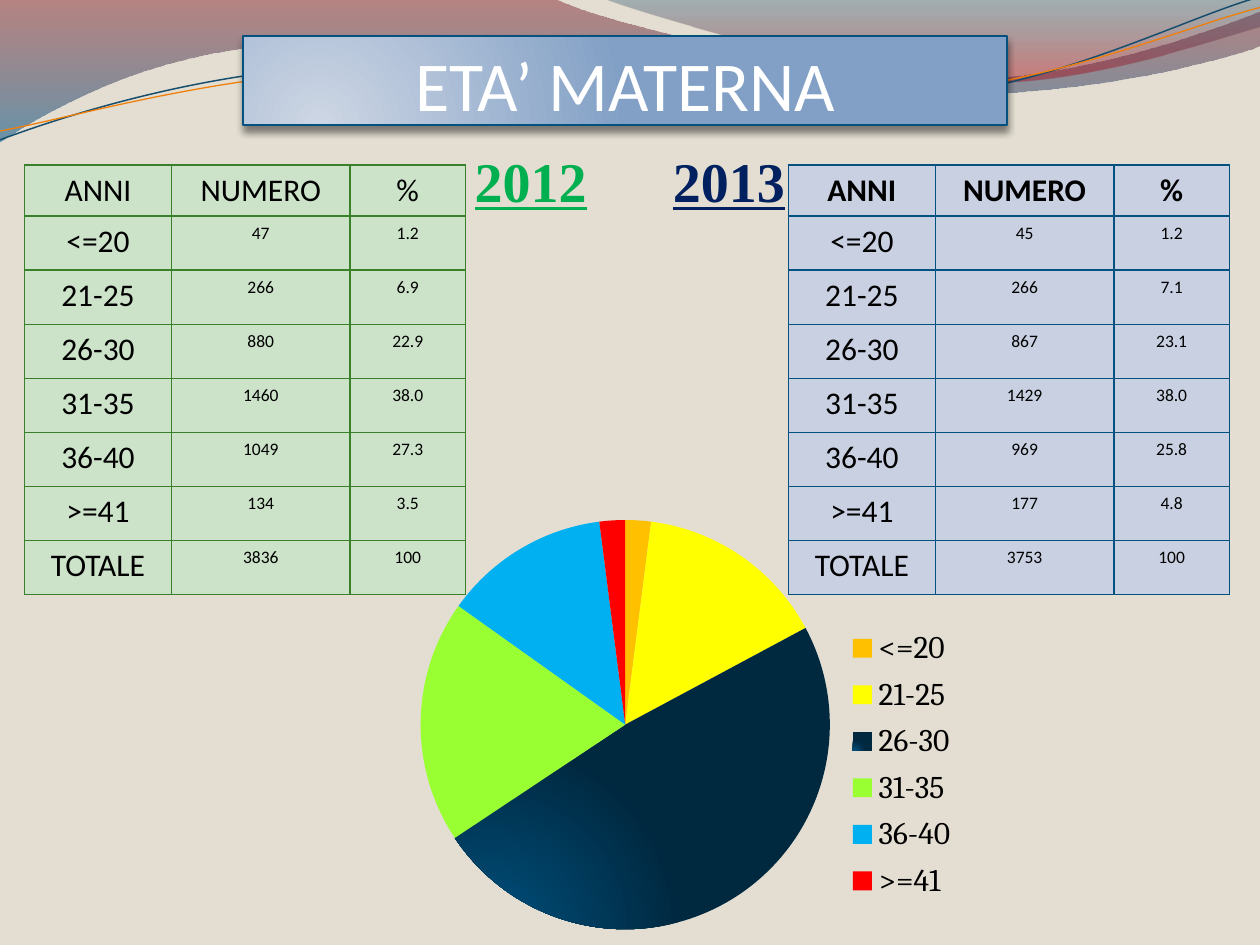
from dataclasses import dataclass
from math import cos, radians, sin
from lxml.etree import SubElement
from pptx import Presentation
from pptx.chart.data import CategoryChartData
from pptx.dml.color import RGBColor
from pptx.enum.chart import XL_CHART_TYPE, XL_LEGEND_POSITION
from pptx.enum.text import MSO_ANCHOR, PP_ALIGN
from pptx.oxml import parse_xml
from pptx.oxml.ns import nsdecls, qn
from pptx.util import Pt

AGES = ["<=20", "21-25", "26-30", "31-35", "36-40", ">=41"]
DOWNWARD = '<a:lin ang="5400000" scaled="0"/>'
FROM_CORNER = ('<a:path path="circle"><a:fillToRect l="10000" t="100000" r="90000"/>'
               '</a:path>')


@dataclass
class Wave:
    start: tuple
    segments: list  # two coordinates: line, six: cubic curve (inches)
    stops: list | None = None  # (position %, colour, opacity %)
    line: str = ""
    weight: float = 0
    tilt: float = 0  # degrees anticlockwise
    pivot: tuple = (0, 0)


@dataclass
class YearTable:
    year: str
    heading_left: float
    heading_width: float
    heading_color: str
    left: float
    fill: str
    border: str
    bold_header: bool
    numbers: list
    percents: list


WAVES = [
    Wave((0, -0.01), [(4.4, -0.01), (4.76, 0.17, 6.64, 0.63, 7.58, 0.63),
                      (8.53, 0.63, 9.58, 0.26, 10, 0.09), (10.01, 0.36),
                      (9.83, 0.44, 8.7, 0.76, 7.46, 0.75),
                      (6.22, 0.75, 3.82, 0.28, 2.57, 0.34),
                      (1.29, 0.35, 0.46, 0.83, -0.01, 1.13)],
         stops=[(0, "7E1621", 45), (100, "005689", 55)]),
    Wave((4.79, -0.01), [(5.09, 0.11, 6.82, 0.62, 7.69, 0.65),
                         (8.56, 0.69, 9.61, 0.32, 10, 0.21), (10, 0)],
         stops=[(0, "094467", 30), (80, "A10F1F", 45)]),
    Wave((0, 1.11), [(0.48, 0.93, 1.58, 0.57, 2.77, 0.52),
                     (3.95, 0.47, 5.93, 0.89, 7.13, 0.8),
                     (8.33, 0.71, 9.38, 0.15, 9.98, -0.02)],
         line="184E6D", weight=0.85, tilt=2.7, pivot=(4.99, 0.58)),
    Wave((0, 1.04), [(0.47, 0.96, 1.64, 0.61, 2.83, 0.56),
                     (4.03, 0.51, 5.97, 0.83, 7.17, 0.75),
                     (8.36, 0.67, 9.41, 0.21, 10, 0.06)],
         line="F07F09", weight=0.75, tilt=2.7, pivot=(5, 0.59)),
]
YEAR_TABLES = [
    YearTable("2012", 178.8, 249, "00B050", 14, "CCE3C9", "3A802A", False,
              ["47", "266", "880", "1460", "1049", "134", "3836"],
              ["1.2", "6.9", "22.9", "38.0", "27.3", "3.5", "100"]),
    YearTable("2013", 331.6, 170, "002060", 450.5, "C8D0E2", "02517F", True,
              ["45", "266", "867", "1429", "969", "177", "3753"],
              ["1.2", "7.1", "23.1", "38.0", "25.8", "4.8", "100"]),
]


def rgb(color: str) -> RGBColor:
    return RGBColor.from_string(color)


def assign(target, values: dict) -> None:
    for key, value in values.items():
        setattr(target, key, value)


def write(frame, text: str, color: str, space_before: float = 0, **font) -> None:
    frame.text = text
    paragraph = frame.paragraphs[0]
    assign(paragraph, {"alignment": PP_ALIGN.CENTER, "space_before": Pt(space_before)})
    text_font = paragraph.runs[0].font
    assign(text_font, font)
    text_font.color.rgb = rgb(color)


def set_gradient(properties, stops: list, direction: str) -> None:
    """Replace the solid fill of the shape properties by a gradient."""
    marks = "".join(
        f'<a:gs pos="{position * 1000}"><a:srgbClr val="{color}">'
        f'<a:alpha val="{opacity * 1000}"/></a:srgbClr></a:gs>'
        for position, color, opacity in stops)
    gradient = parse_xml(f'<a:gradFill {nsdecls("a")} rotWithShape="1">'
                         f'<a:gsLst>{marks}</a:gsLst>{direction}</a:gradFill>')
    properties.replace(properties.find(qn("a:solidFill")), gradient)


def level(wave: Wave, x: float, y: float) -> tuple:
    """Give a point of the wave, in points, as it lies before the tilt."""
    angle = radians(wave.tilt)
    dx, dy = x - wave.pivot[0], y - wave.pivot[1]
    return (Pt(72 * (wave.pivot[0] + dx * cos(angle) - dy * sin(angle))),
            Pt(72 * (wave.pivot[1] + dx * sin(angle) + dy * cos(angle))))


def bend(outline, segments: list) -> None:
    """Join the three line steps of each cubic segment into one curve."""
    steps = iter(outline.findall(f'.//{qn("a:lnTo")}'))
    for segment in segments:
        first = next(steps)
        if len(segment) == 6:
            first.tag = qn("a:cubicBezTo")
            for _ in range(2):
                extra = next(steps)
                first.append(extra[0])
                extra.getparent().remove(extra)


def draw_wave(slide, wave: Wave) -> None:
    builder = slide.shapes.build_freeform(*level(wave, *wave.start))
    builder.add_line_segments([level(wave, *segment[i:i + 2]) for segment in wave.segments
                               for i in range(0, len(segment), 2)], close=bool(wave.stops))
    ribbon = builder.convert_to_shape()
    bend(ribbon._element, wave.segments)
    ribbon.rotation = -wave.tilt
    ribbon.shadow.inherit = False
    if wave.stops:
        ribbon.fill.solid()
        set_gradient(ribbon._element.spPr, wave.stops, DOWNWARD)
        ribbon.line.fill.background()
    else:
        ribbon.fill.background()
        ribbon.line.color.rgb = rgb(wave.line)
        ribbon.line.width = Pt(wave.weight)


def draw_title(slide) -> None:
    title = slide.shapes.title
    assign(title, {"left": Pt(139), "top": Pt(20.6), "width": Pt(436.5), "height": Pt(51)})
    frame = title.text_frame
    assign(frame, {"margin_left": 0, "margin_top": Pt(3.6), "margin_right": 0,
                   "margin_bottom": 0, "vertical_anchor": MSO_ANCHOR.BOTTOM})
    write(frame, "ETA’ MATERNA", "FFFFFF", name="Calibri", size=Pt(40))
    title.fill.solid()
    title.line.color.rgb = rgb("02517F")
    title.line.width = Pt(1)
    properties = title._element.spPr
    set_gradient(properties, [(0, "CDD6E4", 100), (80, "82A0C5", 100)], FROM_CORNER)
    properties.append(parse_xml(
        f'<a:effectLst {nsdecls("a")}><a:outerShdw blurRad="50800" dist="38100" dir="5400000">'
        '<a:srgbClr val="000000"><a:alpha val="45000"/></a:srgbClr></a:outerShdw></a:effectLst>'))
    slide.shapes._spTree.append(title._element)  # in front of the waves


def draw_heading(slide, data: YearTable) -> None:
    heading = slide.shapes.add_textbox(Pt(data.heading_left), Pt(77),
                                       Pt(data.heading_width), Pt(52))
    assign(heading.text_frame, {"word_wrap": True, "margin_top": 0, "margin_bottom": 0,
                                "vertical_anchor": MSO_ANCHOR.MIDDLE})
    write(heading.text_frame, data.year, data.heading_color, space_before=6.4,
          name="Times New Roman", size=Pt(32), bold=True, underline=True)


def set_borders(cell, color: str) -> None:
    properties = cell._tc.get_or_add_tcPr()
    for place, side in enumerate(("lnL", "lnR", "lnT", "lnB")):
        properties.insert(place, parse_xml(
            f'<a:{side} {nsdecls("a")} w="12700"><a:solidFill>'
            f'<a:srgbClr val="{color}"/></a:solidFill></a:{side}>'))


def draw_table(slide, data: YearTable) -> None:
    rows = [("ANNI", "NUMERO", "%"), *zip(AGES + ["TOTALE"], data.numbers, data.percents)]
    table = slide.shapes.add_table(len(rows), 3, Pt(data.left), Pt(94.3),
                                   Pt(252), Pt(245.5)).table
    assign(table, {"first_row": False, "horz_banding": False})
    for column, width in zip(table.columns, (84, 102, 66)):
        column.width = Pt(width)
    for r, row in enumerate(rows):
        table.rows[r].height = Pt(30.9 if r else 29.2)
        for c, text in enumerate(row):
            cell = table.cell(r, c)
            write(cell.text_frame, text, "000000", name="Calibri",
                  size=Pt(10 if r and c else 18), bold=data.bold_header and r == 0)
            cell.fill.solid()
            cell.fill.fore_color.rgb = rgb(data.fill)
            set_borders(cell, data.border)


def place_part(part, index: int, **fractions) -> None:
    """Give a chart part a fixed place inside the chart."""
    for old in part.findall(qn("c:layout")):
        part.remove(old)
    layout = parse_xml(f'<c:layout {nsdecls("c")}><c:manualLayout/></c:layout>')
    modes = {"xMode": "edge", "yMode": "edge"}
    if index == 0:
        modes = {"layoutTarget": "inner", **modes}
    for key, value in {**modes, **fractions}.items():
        SubElement(layout[0], qn(f"c:{key}")).set("val", str(value))
    part.insert(index, layout)


def draw_pie(slide) -> None:
    ages = CategoryChartData()
    ages.categories = AGES
    ages.add_series("Series 1", (2, 15, 48, 19, 13, 2))
    chart = slide.shapes.add_chart(XL_CHART_TYPE.PIE, Pt(201.3), Pt(287),
                                   Pt(385.2), Pt(254.2), ages).chart
    assign(chart, {"has_title": False, "has_legend": True})
    assign(chart.font, {"name": "Cambria", "size": Pt(18)})
    chart.font.color.rgb = rgb("000000")
    assign(chart.legend, {"position": XL_LEGEND_POSITION.RIGHT, "include_in_layout": False})
    space = chart._chartSpace
    place_part(space.find(f'.//{qn("c:plotArea")}'), 0, x=0.1, y=0.04, w=0.61, h=0.92)
    place_part(space.find(f'.//{qn("c:legend")}'), 1, x=0.715, y=0.265, w=0.2, h=0.65)
    series = chart.plots[0].series[0]
    for i, color in enumerate(["FFC000", "FFFF00", "1B587C", "99FF33", "00B0F0", "FF0000"]):
        slice_format = series.points[i].format
        slice_format.fill.solid()
        slice_format.fill.fore_color.rgb = rgb(color)
    largest = series._element.findall(qn("c:dPt"))[2].find(qn("c:spPr"))
    set_gradient(largest, [(0, "004E7B", 100), (80, "00283F", 100)], FROM_CORNER)


def main() -> None:
    deck = Presentation()
    assign(deck, {"slide_width": Pt(720), "slide_height": Pt(540)})
    slide = deck.slides.add_slide(deck.slide_layouts[5])
    slide.background.fill.solid()
    slide.background.fill.fore_color.rgb = rgb("E3DED1")
    for wave in WAVES:
        draw_wave(slide, wave)
    for data in YEAR_TABLES:
        draw_heading(slide, data)
        draw_table(slide, data)
    draw_title(slide)
    draw_pie(slide)
    deck.save("out.pptx")


if __name__ == "__main__":
    main()
